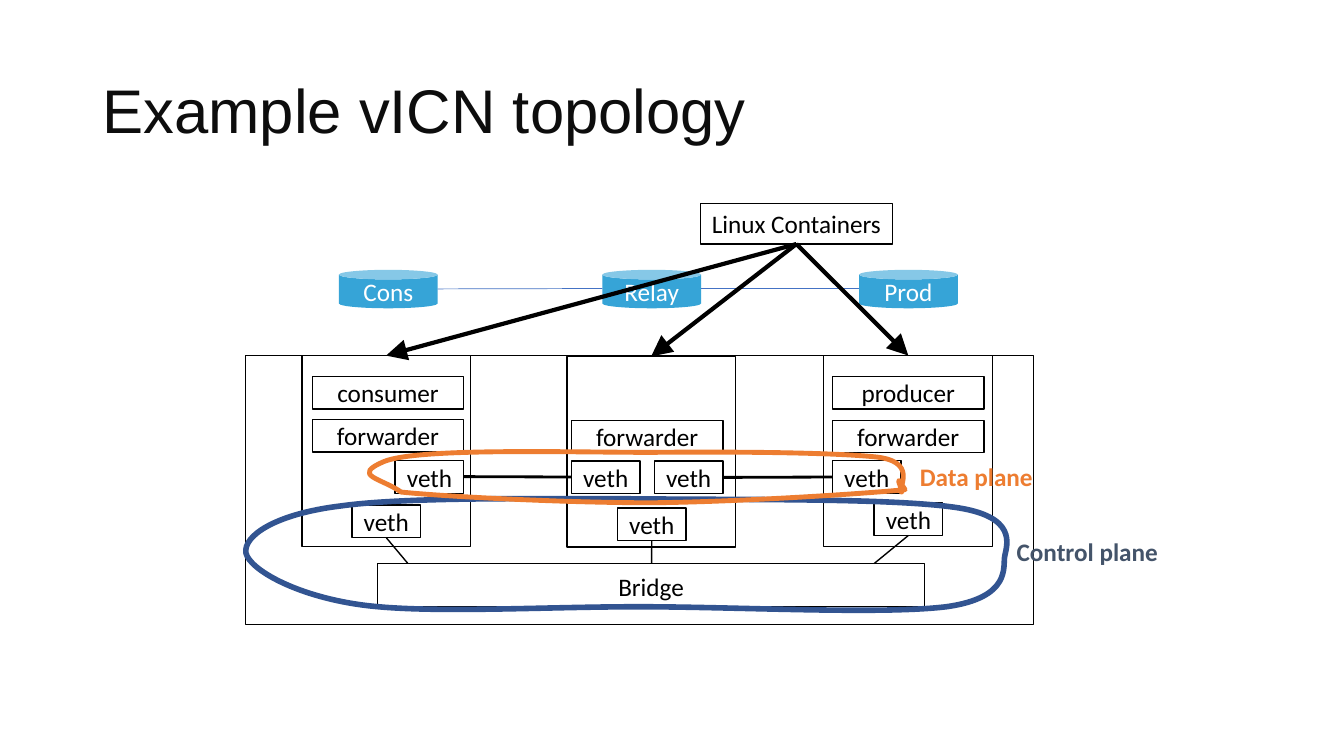
from lxml.etree import SubElement
from pptx import Presentation
from pptx.dml.color import RGBColor
from pptx.enum.shapes import MSO_CONNECTOR, MSO_SHAPE
from pptx.enum.text import MSO_ANCHOR, MSO_AUTO_SIZE, PP_ALIGN
from pptx.oxml.ns import qn
from pptx.util import Cm, Pt

COLORS = {
    "title": "0D0D0D",
    "black": "000000",
    "white": "FFFFFF",
    "node": "36A4D7",
    "link": "4472C4",
    "control": "325491",
    "control_label": "44546A",
    "data": "ED7D31",
}
VETH = (1.73, 0.82)
PROCESS = (3.82, 0.82)
CONTAINER = (4.25, 4.81)
NODE = (2.49, 0.97)

CONTROL_FRAME = (6.2, 12.56, 25.38, 15.38)
CONTROL_START = (6.2, 13.94)
CONTROL_CURVES = [
    ((6.12, 13.51), (6.93, 12.95), (8.59, 12.75)),
    ((10.24, 12.52), (13.51, 12.57), (16.1, 12.57)),
    ((18.67, 12.6), (22.38, 12.55), (24.03, 12.78)),
    ((25.68, 13.0), (25.37, 13.74), (25.32, 14.02)),
    ((25.27, 14.27), (25.5, 15.06), (23.85, 15.29)),
    ((22.2, 15.49), (18.57, 15.29), (16.1, 15.29)),
    ((13.64, 15.29), (10.74, 15.47), (9.09, 15.24)),
    ((7.44, 15.01), (6.3, 14.35), CONTROL_START),
]
DATA_FRAME = (9.3, 11.39, 22.81, 12.67)
DATA_START = (9.68, 11.63)
DATA_CURVES = [
    ((10.54, 11.28), (14.35, 11.4), (16.41, 11.4)),
    ((18.47, 11.38), (20.88, 11.4), (22.02, 11.51)),
    ((23.16, 11.61), (22.63, 12.29), (22.71, 12.4)),
    ((22.81, 12.47), (22.45, 11.76), (22.81, 12.34)),
    ((21.67, 12.45), (18.54, 12.65), (16.41, 12.67)),
    ((14.3, 12.67), (11.28, 12.52), (10.11, 12.4)),
    ((9.6, 12.04), (8.84, 11.99), DATA_START),
]


def color(name):
    return RGBColor.from_string(COLORS[name])


def write_text(shape, text, size=18, font="Calibri", fill="black", bold=False,
               align=PP_ALIGN.CENTER, anchor=MSO_ANCHOR.MIDDLE, wrap=True, spacing=None):
    frame = shape.text_frame
    frame.word_wrap = wrap
    frame.vertical_anchor = anchor
    paragraph = frame.paragraphs[0]
    paragraph.alignment = align
    paragraph.line_spacing = spacing
    run = paragraph.add_run()
    run.text = text
    run.font.size = Pt(size)
    run.font.name = font
    run.font.bold = bold
    run.font.color.rgb = color(fill)


def add_title(slide, text):
    title = slide.shapes.title
    title.left, title.top, title.width, title.height = Cm(2.33), Cm(1.01), Cm(26.29), Cm(3.68)
    write_text(title, text, size=44, font="Arial", fill="title",
               align=PP_ALIGN.LEFT, spacing=0.9)


def add_box(slide, position, size, text="", fill="white", **text_format):
    shape = slide.shapes.add_shape(MSO_SHAPE.RECTANGLE, *map(Cm, position + size))
    shape.shadow.inherit = False
    if fill:
        shape.fill.solid()
        shape.fill.fore_color.rgb = color(fill)
    else:
        shape.fill.background()
    shape.line.color.rgb = color("black")
    shape.line.width = Pt(1)
    if text:
        write_text(shape, text, **text_format)
    return shape


def add_node(slide, left, text):
    shape = slide.shapes.add_shape(MSO_SHAPE.CAN, Cm(left), Cm(6.8), *map(Cm, NODE))
    shape.shadow.inherit = False
    shape.fill.solid()
    shape.fill.fore_color.rgb = color("node")
    shape.line.fill.background()
    write_text(shape, text, fill="white")


def add_line(slide, start, end, width=1, stroke="black", arrow=False):
    connector = slide.shapes.add_connector(MSO_CONNECTOR.STRAIGHT, *map(Cm, start + end))
    connector.line.color.rgb = color(stroke)
    connector.line.width = Pt(width)
    if arrow:
        SubElement(connector.line._get_or_add_ln(), qn("a:tailEnd"),
                   type="triangle", w="lg", len="lg")
    SubElement(connector._element.spPr, qn("a:effectLst"))


def add_plane(slide, frame, start, curves, stroke, width):
    left, top, right, bottom = map(Cm, frame)
    builder = slide.shapes.build_freeform(left, top)
    builder.add_line_segments([(right, bottom)], close=False)
    shape = builder.convert_to_shape()
    outline = shape._element.spPr.find(".//" + qn("a:path"))
    for segment in list(outline):
        outline.remove(segment)
    for command, points in [("a:moveTo", [start])] + [("a:cubicBezTo", curve) for curve in curves]:
        segment = SubElement(outline, qn(command))
        for x, y in points:
            SubElement(segment, qn("a:pt"), x=str(Cm(x) - left), y=str(Cm(y) - top))
    SubElement(outline, qn("a:close"))
    shape.shadow.inherit = False
    shape.fill.background()
    shape.line.color.rgb = color(stroke)
    shape.line.width = Pt(width)


def add_label(slide, position, size, text, fill):
    label = slide.shapes.add_textbox(*map(Cm, position + size))
    write_text(label, text, fill=fill, bold=True, wrap=False,
               align=PP_ALIGN.LEFT, anchor=MSO_ANCHOR.TOP)
    label.text_frame.auto_size = MSO_AUTO_SIZE.SHAPE_TO_FIT_TEXT


def add_nodes(slide):
    for left, text in ((8.54, "Cons"), (15.18, "Relay"), (21.65, "Prod")):
        add_node(slide, left, text)
    add_line(slide, (11.03, 7.28), (15.18, 7.27), 0.5, "link")
    add_line(slide, (17.66, 7.27), (21.65, 7.27), 0.5, "link")


def add_containers(slide):
    add_box(slide, (6.19, 8.96), (19.86, 6.78))
    for left in (14.4, 16.49):
        add_box(slide, (left, 11.62), VETH, "veth")
    for container_left, veth_left in ((7.61, 9.96), (20.76, 20.98)):
        add_box(slide, (container_left, 8.96), CONTAINER)
        add_box(slide, (veth_left, 11.61), VETH, "veth")
    add_line(slide, (11.69, 12.01), (14.4, 12.02), 2)
    add_line(slide, (18.22, 12.03), (20.98, 12.02), 2)
    for left, top in ((7.87, 10.57), (14.4, 10.59), (20.98, 10.59)):
        add_box(slide, (left, top), PROCESS, "forwarder")
    for left, text in ((7.87, "consumer"), (20.98, "producer")):
        add_box(slide, (left, 9.49), PROCESS, text)
    add_box(slide, (14.29, 8.98), CONTAINER, fill=None)


def add_bridge(slide):
    add_box(slide, (9.52, 14.2), (13.78, 1.08), "Bridge", fill=None, anchor=MSO_ANCHOR.BOTTOM)
    for left, top, bridge_x in ((8.87, 12.73, 10.28), (15.56, 12.8, 16.42), (22.03, 12.67, 22.03)):
        add_box(slide, (left, top), VETH, "veth")
        add_line(slide, (left + VETH[0] / 2, top + VETH[1]), (bridge_x, 14.2))


def add_planes(slide):
    add_plane(slide, CONTROL_FRAME, CONTROL_START, CONTROL_CURVES, "control", 4)
    add_label(slide, (25.37, 13.4), (4.09, 1.02), "Control plane", "control_label")
    add_plane(slide, DATA_FRAME, DATA_START, DATA_CURVES, "data", 3.5)
    add_label(slide, (22.93, 11.51), (3.38, 1.02), "Data plane", "data")


def add_container_callout(slide):
    callout = add_box(slide, (17.65, 5.13), (4.84, 1.02), "Linux Containers", fill=None,
                      wrap=False, anchor=MSO_ANCHOR.TOP)
    callout.text_frame.auto_size = MSO_AUTO_SIZE.SHAPE_TO_FIT_TEXT
    for target in ((9.73, 8.96), (16.41, 8.98), (22.89, 8.96)):
        add_line(slide, (20.07, 6.15), target, 3, arrow=True)


def main():
    presentation = Presentation()
    presentation.slide_width, presentation.slide_height = Cm(33.87), Cm(19.05)
    slide = presentation.slides.add_slide(presentation.slide_layouts[5])
    add_title(slide, "Example vICN topology")
    add_nodes(slide)
    add_containers(slide)
    add_bridge(slide)
    add_planes(slide)
    add_container_callout(slide)
    presentation.save("out.pptx")


if __name__ == "__main__":
    main()
